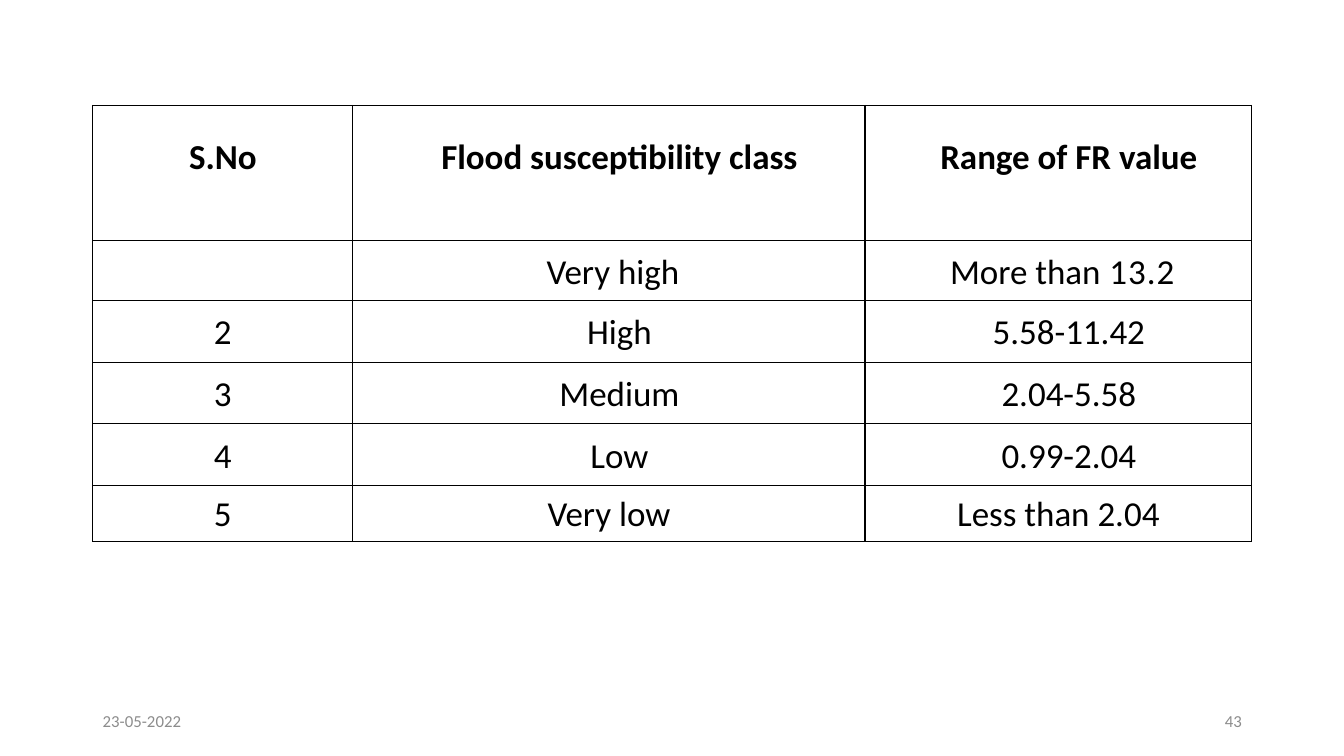
from lxml.etree import SubElement
from pptx import Presentation
from pptx.dml.color import RGBColor
from pptx.enum.text import MSO_ANCHOR, PP_ALIGN
from pptx.oxml.ns import qn
from pptx.util import Cm, Pt

COLORS = {"ink": "000000", "footer": "8C8C8C"}
FONT = "Calibri"

HEADINGS = ["S.No", "Flood susceptibility class", "Range of FR value"]
# A tuple holds a plain part and a part with wider letter spacing.
CLASSES = [
    ["", " Very high", (" More than", " 13.2")],
    ["2", "High", "5.58-11.42"],
    ["3", "Medium", "2.04-5.58"],
    ["4", "Low", "0.99-2.04"],
    ["5", "Very low", "Less than 2.04"],
]
FOOTERS = [("23-05-2022", 2.34, PP_ALIGN.LEFT), ("43", 23.93, PP_ALIGN.RIGHT)]

TABLE_LEFT, TABLE_TOP = 2.34, 2.66
COLUMN_WIDTHS = [6.55, 12.91, 9.74]
ROW_HEIGHTS = [3.4, 1.52, 1.55, 1.55, 1.55, 1.42]
INDENT = Cm(0.53)
LAST_ROW = len(CLASSES)
INDENTED_ROWS = (0, 2, 3, 4)

HEADING_FORMAT = {"line_spacing": Pt(8.8), "space_before": Pt(1.9)}
BODY_FORMAT = {"line_spacing": 1.07}
SPACED_FORMAT = {"line_spacing": 1.07, "space_before": Pt(0.3)}
FLUSH_CELL = {
    "vertical_anchor": MSO_ANCHOR.MIDDLE,
    "margin_left": 0, "margin_right": 0, "margin_top": 0, "margin_bottom": 0,
}


def apply(target, formats):
    for name, value in formats.items():
        setattr(target, name, value)


def add_run(paragraph, wording, size, color, bold=False):
    run = paragraph.add_run()
    run.text = wording
    apply(run.font, {"name": FONT, "size": Pt(size), "bold": bold})
    run.font.color.rgb = RGBColor.from_string(COLORS[color])
    return run


def add_borders(cell):
    properties = cell._tc.get_or_add_tcPr()
    for side in ("lnL", "lnR", "lnT", "lnB"):
        line = SubElement(properties, qn(f"a:{side}"), w=str(Pt(1)))
        fill = SubElement(line, qn("a:solidFill"))
        SubElement(fill, qn("a:srgbClr"), val=COLORS["ink"])


def paragraph_format(row):
    if row == 0:
        return HEADING_FORMAT
    return SPACED_FORMAT if row in (1, LAST_ROW) else BODY_FORMAT


def fill_cell(cell, row, column, entry):
    add_borders(cell)
    cell.fill.background()
    if row != LAST_ROW:
        apply(cell, FLUSH_CELL)
    if not entry:
        return
    paragraph = cell.text_frame.paragraphs[0]
    apply(paragraph, {"alignment": PP_ALIGN.CENTER, **paragraph_format(row)})
    if column and row in INDENTED_ROWS:
        paragraph._p.get_or_add_pPr().set("marL", str(INDENT))
    parts = entry if isinstance(entry, tuple) else (entry,)
    for index, part in enumerate(parts):
        run = add_run(paragraph, part, 25, "ink", bold=row == 0)
        if index:
            run.font._element.set("spc", "70")


def add_class_table(slide):
    rows = [HEADINGS, *CLASSES]
    table = slide.shapes.add_table(
        len(rows), len(HEADINGS), Cm(TABLE_LEFT), Cm(TABLE_TOP),
        Cm(sum(COLUMN_WIDTHS)), Cm(sum(ROW_HEIGHTS))).table
    apply(table, {"first_row": False, "horz_banding": False})
    for column, width in zip(table.columns, COLUMN_WIDTHS):
        column.width = Cm(width)
    for row, height in zip(table.rows, ROW_HEIGHTS):
        row.height = Cm(height)
    for r, entries in enumerate(rows):
        for c, entry in enumerate(entries):
            fill_cell(table.cell(r, c), r, c, entry)


def add_footer(slide, wording, left, alignment):
    frame = slide.shapes.add_textbox(Cm(left), Cm(17.65), Cm(7.62), Cm(1.02)).text_frame
    apply(frame, {"word_wrap": True, "vertical_anchor": MSO_ANCHOR.MIDDLE})
    paragraph = frame.paragraphs[0]
    paragraph.alignment = alignment
    add_run(paragraph, wording, 12, "footer")


def main():
    deck = Presentation()
    apply(deck, {"slide_width": Cm(33.87), "slide_height": Cm(19.05)})
    slide = deck.slides.add_slide(deck.slide_layouts[6])
    for footer in FOOTERS:
        add_footer(slide, *footer)
    add_class_table(slide)
    deck.save("out.pptx")


if __name__ == "__main__":
    main()
